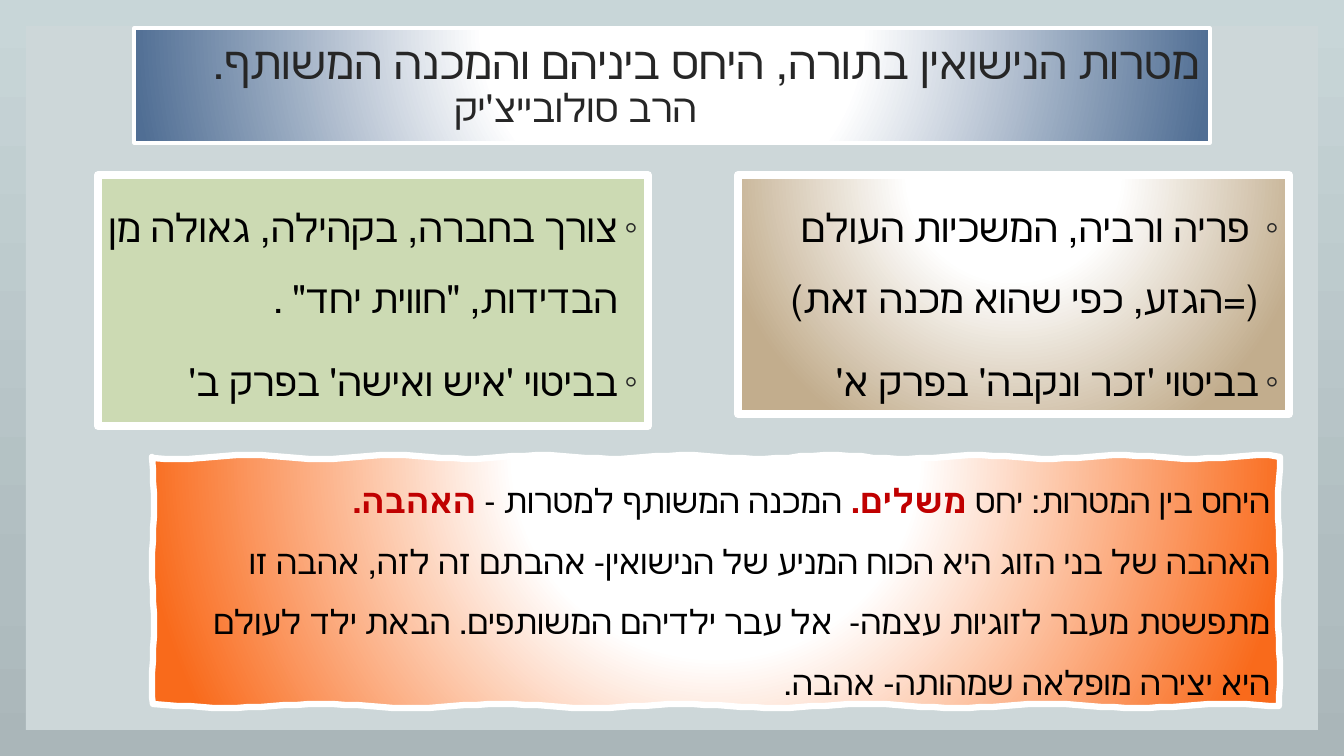
from dataclasses import dataclass
from math import sin

from lxml.etree import SubElement, _Element
from pptx import Presentation
from pptx.dml.color import RGBColor
from pptx.enum.shapes import MSO_SHAPE
from pptx.enum.text import MSO_ANCHOR, MSO_AUTO_SIZE, PP_ALIGN
from pptx.oxml.ns import qn
from pptx.shapes.autoshape import Shape
from pptx.slide import Slide
from pptx.text.text import Font, TextFrame, _Paragraph
from pptx.util import Emu, Pt

EMU_PER_PX = 914400 / 100.8
COLORS = {
    "sky": "C8D6D8", "mist": "B0BDC0", "slate": "AAB6B9", "panel": "CDD7D9",
    "white": "FFFFFF", "black": "000000", "ink": "262626", "red": "C00000",
    "blue": "506E94", "green": "CCDAB3", "sand": "C2AD8D", "orange": "F96A1B",
}


@dataclass(frozen=True)
class Box:
    left: int
    top: int
    width: int
    height: int


@dataclass(frozen=True)
class GoalCard:
    placeholder: int
    box: Box
    color: str
    glow: bool
    border: float
    items: tuple[str, ...]


@dataclass(frozen=True)
class TitleLine:
    text: str
    size: float
    margin: int


@dataclass(frozen=True)
class Phrase:
    text: str
    emphasis: bool = False


TITLE_BOX = Box(134, 28, 1076, 115)
PANEL_BOX = Box(26, 26, 1292, 704)
SUMMARY_BOX = Box(153, 457, 1126, 249)
TITLE_LINES = (
    TitleLine("מטרות הנישואין בתורה, היחס ביניהם והמכנה המשותף.", 32.4, 0),
    TitleLine("הרב סולובייצ'יק", 27.9, 503),
)
GOAL_CARDS = (
    GoalCard(1, Box(98, 175, 550, 251), "green", False, 5.5, (
        "צורך בחברה, בקהילה, גאולה מן הבדידות, \"חווית יחד\" .",
        "בביטוי 'איש ואישה' בפרק ב'",
    )),
    GoalCard(2, Box(738, 175, 551, 239), "sand", True, 5.75, (
        " פריה ורביה, המשכיות העולם (=הגזע, כפי שהוא מכנה זאת)",
        "בביטוי 'זכר ונקבה' בפרק א'",
    )),
)
SUMMARY = (
    (
        Phrase("היחס בין המטרות: יחס "),
        Phrase("משלים. ", True),
        Phrase("המכנה המשותף למטרות - "),
        Phrase("האהבה.", True),
    ),
    (
        Phrase(
            "האהבה של בני הזוג היא הכוח המניע של הנישואין- אהבתם זה לזה, אהבה זו "
            "מתפשטת מעבר לזוגיות עצמה-  אל עבר ילדיהם המשותפים. הבאת ילד לעולם "
            "היא יצירה מופלאה שמהותה- אהבה."
        ),
    ),
)


def px(length: float) -> Emu:
    return Emu(round(length * EMU_PER_PX))


def rgb(name: str) -> RGBColor:
    return RGBColor.from_string(COLORS[name])


def write_gradient(owner: _Element, stops: dict[int, str], radial: bool) -> None:
    gradient = owner.find(".//" + qn("a:gradFill"))
    for child in list(gradient):
        gradient.remove(child)
    stop_list = SubElement(gradient, qn("a:gsLst"))
    for position, color in stops.items():
        stop = SubElement(stop_list, qn("a:gs"), pos=str(position * 1000))
        SubElement(stop, qn("a:srgbClr"), val=COLORS[color])
    if radial:
        path = SubElement(gradient, qn("a:path"), path="circle")
        SubElement(path, qn("a:fillToRect"), l="50000", t="-80000", r="50000", b="180000")
    else:
        SubElement(gradient, qn("a:lin"), ang="5400000", scaled="0")


def place(shape: Shape, box: Box) -> None:
    shape.left, shape.top = px(box.left), px(box.top)
    shape.width, shape.height = px(box.width), px(box.height)


def paint(shape: Shape, color: str, glow: bool, border: float) -> None:
    if glow:
        shape.fill.gradient()
        write_gradient(shape.element.spPr, {0: "white", 35: "white", 100: color}, True)
    else:
        shape.fill.solid()
        shape.fill.fore_color.rgb = rgb(color)
    shape.line.color.rgb = rgb("white")
    shape.line.width = Pt(border)


def prepare_text(shape: Shape, anchor: MSO_ANCHOR) -> TextFrame:
    frame = shape.text_frame
    frame.word_wrap = True
    frame.auto_size = MSO_AUTO_SIZE.NONE
    frame.vertical_anchor = anchor
    return frame


def next_paragraph(frame: TextFrame, index: int, spacing: float, before: float) -> _Paragraph:
    paragraph = frame.add_paragraph() if index else frame.paragraphs[0]
    paragraph.alignment = PP_ALIGN.RIGHT
    paragraph.line_spacing = spacing
    paragraph.space_before = Pt(before)
    paragraph._p.get_or_add_pPr().set("rtl", "1")
    return paragraph


def style_font(font: Font, name: str, size: float, color: str) -> None:
    font.name = name
    font.size = Pt(size)
    font.color.rgb = rgb(color)


def indent(paragraph: _Paragraph, margin: int, first: int) -> None:
    properties = paragraph._p.get_or_add_pPr()
    properties.set("marL", str(px(margin)))
    properties.set("indent", str(px(first)))


def add_bullet(paragraph: _Paragraph) -> None:
    indent(paragraph, 20, -20)
    properties = paragraph._p.get_or_add_pPr()
    bullet = SubElement(properties, qn("a:buChar"), char="◦")
    color = SubElement(properties, qn("a:buClr"))
    SubElement(color, qn("a:srgbClr"), val=COLORS["ink"])
    bullet.addprevious(color)


def draw_backdrop(slide: Slide) -> None:
    slide.background.fill.gradient()
    write_gradient(slide.element, {0: "sky", 77: "mist", 100: "slate"}, False)
    panel = slide.shapes.add_shape(MSO_SHAPE.RECTANGLE, 0, 0, 0, 0)
    place(panel, PANEL_BOX)
    panel.shadow.inherit = False
    panel.fill.solid()
    panel.fill.fore_color.rgb = rgb("panel")
    panel.line.fill.background()
    slide.shapes.element.insert(2, panel.element)


def draw_title(slide: Slide) -> None:
    title = slide.shapes.title
    place(title, TITLE_BOX)
    paint(title, "blue", True, 2.25)
    frame = prepare_text(title, MSO_ANCHOR.MIDDLE)
    for index, line in enumerate(TITLE_LINES):
        paragraph = next_paragraph(frame, index, 0.9, 0)
        indent(paragraph, line.margin, 0)
        paragraph.add_run().text = line.text
        style_font(paragraph.font, "Quicksand", line.size, "ink")


def draw_goal_card(slide: Slide, card: GoalCard) -> None:
    body = slide.placeholders[card.placeholder]
    place(body, card.box)
    paint(body, card.color, card.glow, card.border)
    frame = prepare_text(body, MSO_ANCHOR.TOP)
    for index, item in enumerate(card.items):
        paragraph = next_paragraph(frame, index, 1.5, 9)
        add_bullet(paragraph)
        paragraph.add_run().text = item
        style_font(paragraph.font, "Times New Roman", 28, "black")


def wavy_outline(box: Box, step: int = 12) -> list[tuple[float, float]]:
    right, bottom = box.left + box.width, box.top + box.height
    across, down = range(box.left, right, step), range(box.top, bottom, step)
    top_edge = [(x, box.top + round(2 * sin(x / 23))) for x in across]
    right_edge = [(right + round(sin(y / 17)), y) for y in down]
    bottom_edge = [(x, bottom + round(2 * sin(x / 29))) for x in reversed(across)]
    left_edge = [(box.left + round(sin(y / 19)), y) for y in reversed(down)]
    return top_edge + right_edge + [(right, bottom)] + bottom_edge + left_edge


def draw_summary(slide: Slide) -> None:
    start, *points = wavy_outline(SUMMARY_BOX)
    builder = slide.shapes.build_freeform(*start, scale=EMU_PER_PX)
    builder.add_line_segments(points, close=True)
    summary = builder.convert_to_shape()
    summary.shadow.inherit = False
    paint(summary, "orange", True, 4.5)
    frame = prepare_text(summary, MSO_ANCHOR.TOP)
    for index, phrases in enumerate(SUMMARY):
        paragraph = next_paragraph(frame, index, 1.5, 0)
        style_font(paragraph.font, "Times New Roman", 24, "black")
        for phrase in phrases:
            run = paragraph.add_run()
            run.text = phrase.text
            run.font.bold = phrase.emphasis
            run.font.color.rgb = rgb("red" if phrase.emphasis else "black")


def main() -> None:
    presentation = Presentation()
    presentation.slide_width, presentation.slide_height = px(1344), px(756)
    slide = presentation.slides.add_slide(presentation.slide_layouts[3])
    draw_backdrop(slide)
    draw_title(slide)
    for card in GOAL_CARDS:
        draw_goal_card(slide, card)
    draw_summary(slide)
    presentation.save("out.pptx")


if __name__ == "__main__":
    main()
